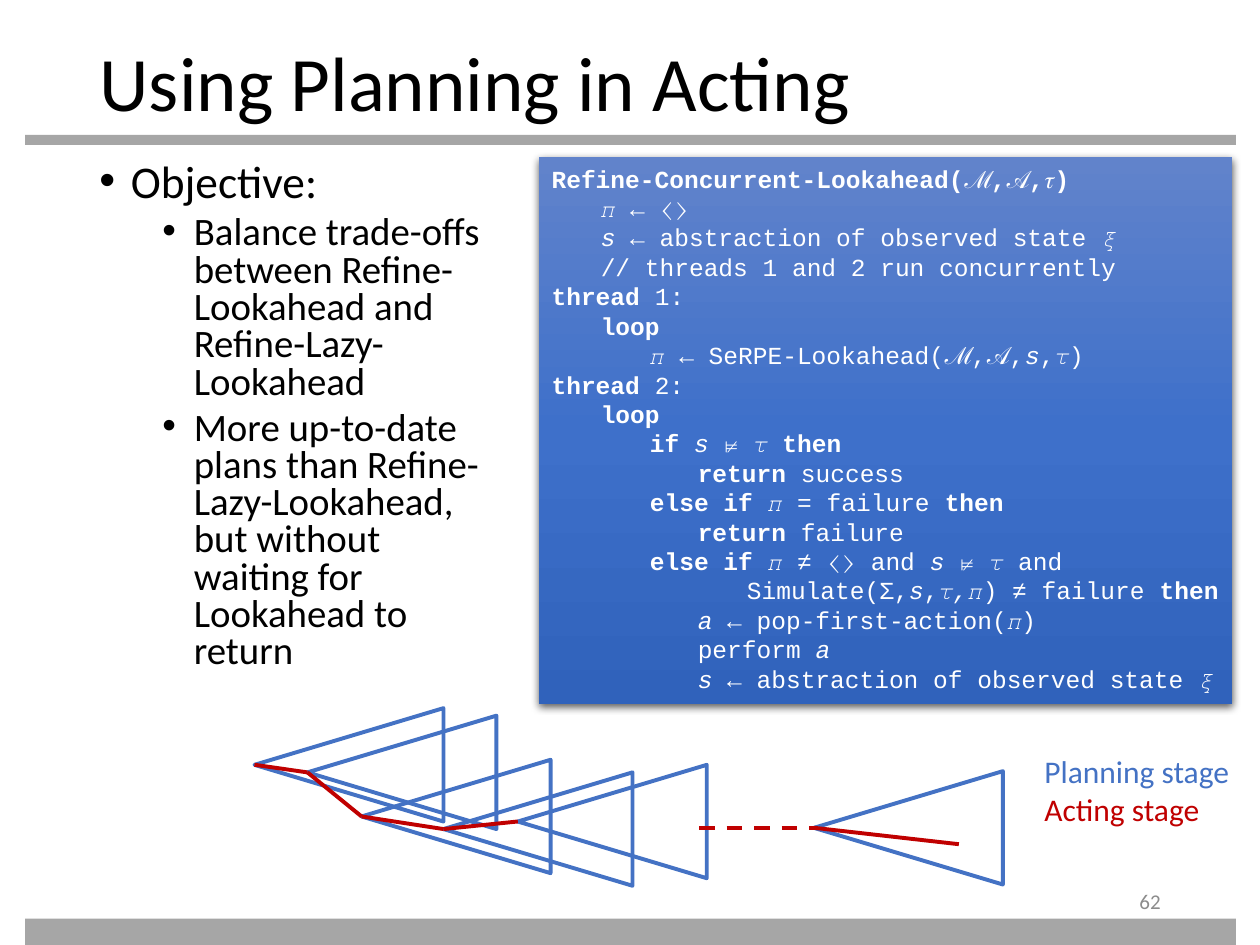
from copy import deepcopy
from dataclasses import dataclass
from itertools import pairwise

from lxml.etree import SubElement
from pptx import Presentation
from pptx.dml.color import RGBColor as Color
from pptx.enum.dml import MSO_LINE as Dash
from pptx.enum.shapes import MSO_CONNECTOR as Connector
from pptx.enum.shapes import MSO_SHAPE as Shape
from pptx.enum.text import MSO_ANCHOR as Anchor
from pptx.enum.text import PP_ALIGN as Align
from pptx.oxml.ns import qn
from pptx.util import Inches, Pt


@dataclass(frozen=True)
class Theme:
    """Colours, fonts and type sizes of the deck."""

    ink: Color = Color(0x00, 0x00, 0x00)
    paper: Color = Color(0xFF, 0xFF, 0xFF)
    bar: Color = Color(0xA6, 0xA6, 0xA6)
    muted: Color = Color(0x8C, 0x8C, 0x8C)
    planning: Color = Color(0x44, 0x72, 0xC4)
    acting: Color = Color(0xC0, 0x00, 0x00)
    panel: tuple = ("6183CB", "3E70CA", "3062BB")
    sans: str = "Calibri"
    mono: str = "Courier New"
    title: float = 44
    bullets: tuple = (25.9, 22.2)
    legend: float = 18
    code: float = 14
    number: float = 12
    stroke: float = 2.25


BULLETS = [
    (0, "Objective:"),
    (1, "Balance trade-offs between Refine-Lookahead and Refine-Lazy-Lookahead"),
    (1, "More up-to-date plans than Refine-Lazy-Lookahead, but without waiting for Lookahead to return"),
]
CODE = """\
*Refine-Concurrent-Lookahead(ℳ,𝒜,𝜏)*
\t𝜋 ← ⟨⟩
\t_s_ ← abstraction of observed state 𝜉
\t// threads 1 and 2 run concurrently
*thread *1:
\t*loop*
\t\t𝜋 ← SeRPE-Lookahead(ℳ,𝒜,_s_,𝜏)
*thread* 2:
\t*loop*
\t\t*if *_s _⊭ 𝜏 *then*
\t\t\t*return* success
\t\t*else if* 𝜋 = failure *then*
\t\t\t*return* failure
\t\t*else if *𝜋 ≠ ⟨⟩ and _s _⊭ 𝜏 and
\t\t\t\tSimulate(Σ,_s_,𝜏_,_𝜋) ≠ failure *then*
\t\t\t_a_ ← pop-first-action(𝜋)
\t\t\tperform _a_
\t\t\t_s_ ← abstraction of observed state 𝜉"""
TABS = (0.39, 0.78, 1.16, 1.55)
STATES = [(2.02, 6.07), (2.44, 6.13), (2.87, 6.48), (3.52, 6.58), (4.11, 6.52)]
LAST_STATE = (6.46, 6.57)


class Page:
    """Holds the theme and the current slide."""

    def __init__(self, deck, theme):
        """Start a title-only slide."""
        self.theme = theme
        self.slide = deck.slides.add_slide(deck.slide_layouts[5])
        self.shapes = self.slide.shapes

    def style(self, para, size, color, name=None):
        """Set the font of a whole paragraph."""
        font = para.font
        font.name, font.size = name or self.theme.sans, Pt(size)
        font.color.rgb = color

    def bar(self, top, height):
        """Draw a full-width grey bar."""
        box = self.shapes.add_shape(
            Shape.RECTANGLE, Inches(0.2), Inches(top), Inches(9.61), Inches(height))
        box.shadow.inherit = False
        box.fill.solid()
        box.fill.fore_color.rgb = self.theme.bar
        box.line.fill.background()

    def title(self, text):
        """Place and format the title."""
        box = self.shapes.title
        box.left, box.top, box.width, box.height = map(Inches, (0.69, 0.29, 8.62, 0.79))
        box.text_frame.text = text
        box.text_frame.vertical_anchor = Anchor.MIDDLE
        para = box.text_frame.paragraphs[0]
        para.alignment, para.line_spacing = Align.LEFT, 0.9
        self.style(para, self.theme.title, self.theme.ink)

    def text(self, left, top, width, height, wrap=True):
        """Add a text box and return its frame."""
        box = self.shapes.add_textbox(*map(Inches, (left, top, width, height)))
        box.text_frame.word_wrap = wrap
        return box.text_frame

    def lines(self, frame, texts):
        """Yield one paragraph for each text."""
        for index, text in enumerate(texts):
            yield (frame.add_paragraph() if index else frame.paragraphs[0]), text

    def bullets(self, items):
        """Add the bulleted list."""
        frame = self.text(0.69, 1.25, 3.26, 4.27)
        for para, (level, text) in self.lines(frame, items):
            para.text, para.level, para.line_spacing = text, level, 0.8
            if level:
                para.space_before = Pt(5)
            props = para._p.get_or_add_pPr()
            props.set("marL", str(Inches(0.25 + 0.5 * level)))
            props.set("indent", str(Inches(-0.25)))
            SubElement(props, qn("a:buFont"), typeface="Arial")
            SubElement(props, qn("a:buChar"), char="•")
            self.style(para, self.theme.bullets[level], self.theme.ink)

    def legend(self, entries):
        """Name the two stages in their colours."""
        frame = self.text(8.19, 5.92, 1.69, 0.71, wrap=False)
        for para, (text, color) in self.lines(frame, entries):
            para.text = text
            self.style(para, self.theme.legend, color)

    def number(self, text):
        """Add the page number."""
        frame = self.text(7.06, 6.95, 2.25, 0.4)
        frame.vertical_anchor = Anchor.MIDDLE
        para = frame.paragraphs[0]
        para.text, para.alignment = text, Align.RIGHT
        self.style(para, self.theme.number, self.theme.muted)

    def plan(self, apex):
        """Draw a planning triangle opening to the right of its apex."""
        x, y = apex
        width, height = 0.9, 1.5
        box = self.shapes.add_shape(
            Shape.ISOSCELES_TRIANGLE, Inches(x + (height - width) / 2),
            Inches(y - height / 2), Inches(width), Inches(height))
        box.rotation = 270
        box.shadow.inherit = False
        box.fill.background()
        box.line.color.rgb, box.line.width = self.theme.planning, Pt(self.theme.stroke)

    def act(self, start, end, dash=None):
        """Draw one step of the acting stage."""
        step = self.shapes.add_connector(Connector.STRAIGHT, *map(Inches, start + end))
        SubElement(step._element.spPr, qn("a:effectLst"))
        step.line.color.rgb, step.line.width = self.theme.acting, Pt(self.theme.stroke)
        if dash:
            step.line.dash_style = dash

    def panel(self):
        """Add the shaded code panel and return its frame."""
        box = self.shapes.add_shape(
            Shape.RECTANGLE, Inches(4.28), Inches(1.25), Inches(5.5), Inches(4.34))
        box.fill.gradient()
        box.fill.gradient_angle = 270
        stops = box._element.spPr.find(".//" + qn("a:gsLst"))
        stops.append(deepcopy(stops[0]))
        for index, (stop, color) in enumerate(zip(box.fill.gradient_stops, self.theme.panel)):
            stop.position = index / 2
            stop.color.rgb = Color.from_string(color)
        box.line.fill.background()
        effects = SubElement(box._element.spPr, qn("a:effectLst"))
        shadow = SubElement(
            effects, qn("a:outerShdw"), blurRad=str(Pt(4.5)), dist=str(Pt(1.5)),
            dir="5400000", algn="ctr", rotWithShape="0")
        black = SubElement(shadow, qn("a:srgbClr"), val="000000")
        SubElement(black, qn("a:alpha"), val="63000")
        box.text_frame.word_wrap = True
        box.text_frame.vertical_anchor = Anchor.TOP
        return box.text_frame

    def code(self, source):
        """Write code where * marks bold and _ marks italic."""
        for para, line in self.lines(self.panel(), source.split("\n")):
            para.alignment = Align.LEFT
            tabs = SubElement(para._p.get_or_add_pPr(), qn("a:tabLst"))
            for tab in TABS:
                SubElement(tabs, qn("a:tab"), pos=str(Inches(tab)), algn="l")
            self.style(para, self.theme.code, self.theme.paper, self.theme.mono)
            for bold, part in enumerate(line.split("*")):
                for italic, text in enumerate(part.split("_")):
                    if text:
                        span = para.add_run()
                        span.text = text
                        span.font.bold = bold % 2 == 1
                        span.font.italic = italic % 2 == 1


def main():
    """Build the slide and save it."""
    deck = Presentation()
    deck.slide_width, deck.slide_height = Inches(10), Inches(7.5)
    theme = Theme()
    page = Page(deck, theme)
    page.bar(1.07, 0.08)
    page.bar(7.29, 0.21)
    page.title("Using Planning in Acting")
    page.bullets(BULLETS)
    page.number("62")
    for apex in STATES + [LAST_STATE]:
        page.plan(apex)
    for start, end in pairwise(STATES):
        page.act(start, end)
    page.act(LAST_STATE, (7.61, 6.7))
    page.act((5.55, 6.57), LAST_STATE, Dash.DASH)
    page.legend([("Planning stage", theme.planning), ("Acting stage", theme.acting)])
    page.code(CODE)
    deck.save("out.pptx")


if __name__ == "__main__":
    main()
